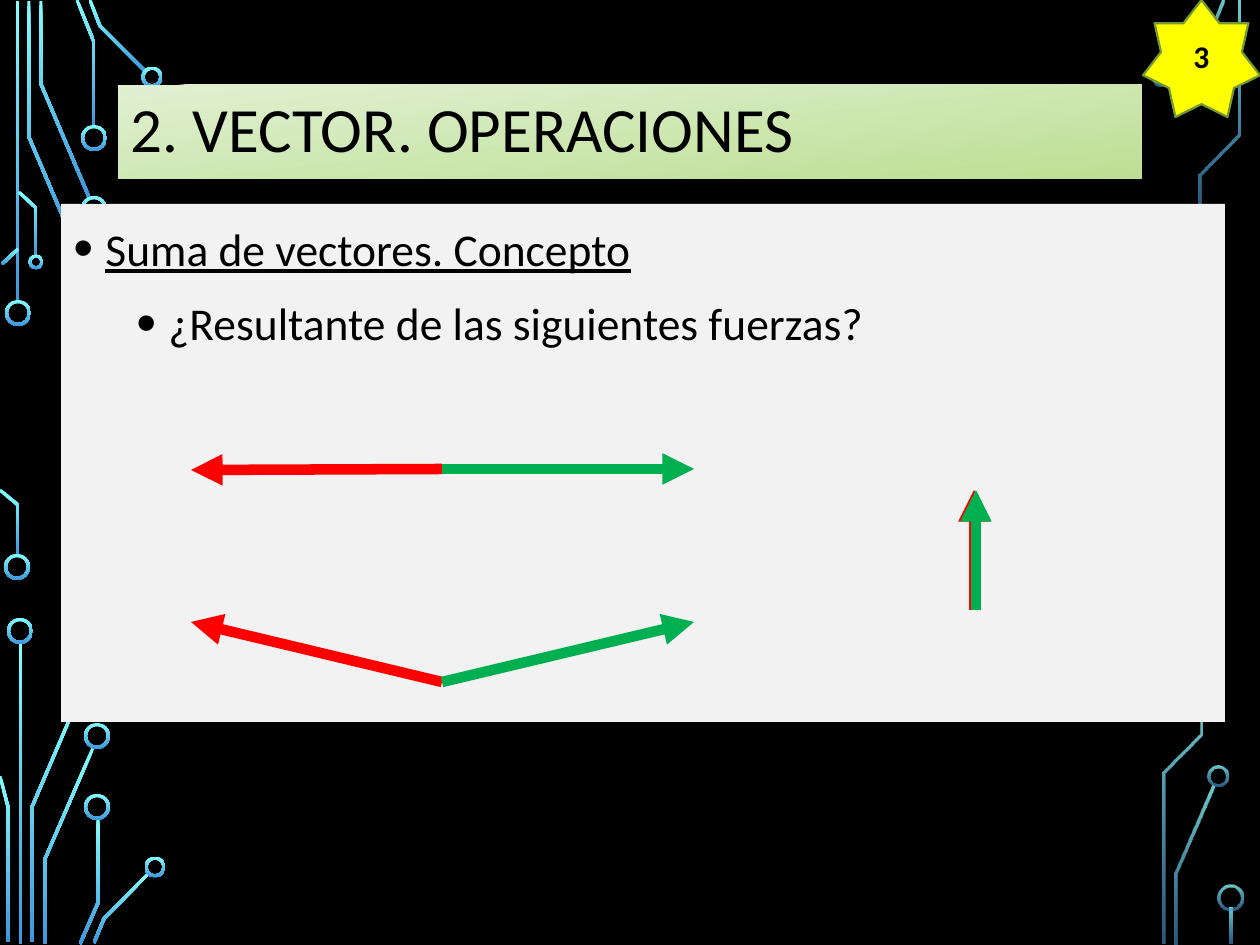
from math import hypot

from lxml.etree import SubElement
from pptx import Presentation
from pptx.dml.color import RGBColor
from pptx.enum.shapes import MSO_CONNECTOR, MSO_SHAPE
from pptx.enum.text import MSO_ANCHOR, PP_ALIGN
from pptx.oxml.ns import qn
from pptx.util import Pt

BLACK = RGBColor(0x00, 0x00, 0x00)
CYAN = RGBColor(0x82, 0xFF, 0xFF)
BLUE = RGBColor(0x3D, 0x97, 0xDE)
PALE_GREEN = RGBColor(0xE1, 0xF0, 0xD2)
LIGHT_GREEN = RGBColor(0xBC, 0xDF, 0x93)
GREY = RGBColor(0xF2, 0xF2, 0xF2)
RED = RGBColor(0xFF, 0x00, 0x00)
GREEN = RGBColor(0x00, 0xB0, 0x50)
YELLOW = RGBColor(0xFF, 0xFF, 0x00)
OLIVE = RGBColor(0x72, 0x98, 0x38)

WIDTH, HEIGHT = 1260, 945
TRACE_WIDTH = 3

# Circuit decoration: vertical bars (left, top, height), bent traces, rings (x, y, diameter)
LEFT_BARS = [(16, 1, 301), (19, 643, 301)]
LEFT_TRACES = [
    [(77, 250), (29, 137), (29, 1)],
    [(89, 197), (41, 84), (41, 1)],
    [(94, 126), (94, 42), (77, 0)],
    [(146, 72), (100, 26), (90, 0)],
    [(2, 264), (18, 249)],
    [(18, 556), (18, 505), (0, 490)],
    [(36, 256), (36, 208), (19, 192)],
    [(32, 942), (32, 807), (80, 695)],
    [(8, 942), (8, 807), (0, 776)],
    [(45, 944), (45, 859), (93, 748)],
    [(80, 944), (98, 903), (98, 819)],
    [(94, 943), (104, 919), (149, 873)],
]
LEFT_RINGS = [(18, 313, 26), (17, 567, 26), (94, 209, 26), (94, 138, 26), (152, 77, 21),
              (36, 262, 15), (20, 631, 26), (97, 736, 26), (97, 807, 26), (155, 867, 21)]
RIGHT_BARS = [(1230, 908, 36)]
RIGHT_TRACES = [
    [(1169, 70), (1213, 25), (1223, 0)],
    [(1176, 944), (1176, 873), (1213, 786)],
    [(1200, 213), (1200, 175), (1239, 135), (1239, 1)],
    [(1164, 944), (1164, 773), (1201, 735), (1201, 696)],
]
RIGHT_RINGS = [(1162, 76, 21), (1218, 776, 21), (1231, 898, 26)]


def emu(px):
    return round(px * 914400 / 126)


def ribbon(points, width):
    """Outline of a bent line of even width, with mitred corners."""
    normals = []
    for (x1, y1), (x2, y2) in zip(points, points[1:]):
        length = hypot(x2 - x1, y2 - y1)
        normals.append(((y1 - y2) / length, (x2 - x1) / length))
    left, right = [], []
    for (x, y), (ax, ay), (bx, by) in zip(points, normals[:1] + normals, normals + normals[-1:]):
        reach = width / 2 / (1 + ax * bx + ay * by)
        dx, dy = (ax + bx) * reach, (ay + by) * reach
        left.append((x + dx, y + dy))
        right.append((x - dx, y - dy))
    return left + right[::-1]


class SlideBuilder:
    font = "Calibri"

    def __init__(self, slide):
        self.slide = slide
        self.shapes = slide.shapes

    def background(self, color):
        fill = self.slide.background.fill
        fill.solid()
        fill.fore_color.rgb = color

    def gradient(self, shape, colors, angle, opacities=()):
        shape.shadow.inherit = False
        shape.line.fill.background()
        shape.fill.gradient()
        shape.fill.gradient_angle = 360 - angle
        for stop, color, position in zip(shape.fill.gradient_stops, colors, (0, 1)):
            stop.color.rgb = color
            stop.position = position
        tags = shape.fill._xPr.iter(qn("a:srgbClr"))
        for tag, opacity in zip(tags, opacities):
            SubElement(tag, qn("a:alpha"), val=str(opacity * 1000))

    def shape(self, kind, left, top, width, height, color=None):
        shape = self.shapes.add_shape(kind, emu(left), emu(top), emu(width), emu(height))
        shape.shadow.inherit = False
        shape.line.fill.background()
        if color is not None:
            shape.fill.solid()
            shape.fill.fore_color.rgb = color
        return shape

    def trace(self, points):
        start, *rest = [(emu(x), emu(y)) for x, y in ribbon(points, TRACE_WIDTH)]
        builder = self.shapes.build_freeform(*start)
        builder.add_line_segments(rest, close=True)
        return builder.convert_to_shape()

    def ring(self, x, y, size):
        ring = self.shape(MSO_SHAPE.DONUT, x - size / 2, y - size / 2, size, size)
        ring.adjustments[0] = TRACE_WIDTH / size
        return ring

    def circuit(self, bars, traces, rings, opacities=()):
        parts = [self.shape(MSO_SHAPE.RECTANGLE, left, top, TRACE_WIDTH, height)
                 for left, top, height in bars]
        parts += [self.trace(points) for points in traces]
        parts += [self.ring(*ring) for ring in rings]
        for part in parts:
            self.gradient(part, (CYAN, BLUE), 90, opacities)

    def text(self, shape, lines, size, anchor, align=PP_ALIGN.LEFT, spacing=1.0, bold=False):
        frame = shape.text_frame
        frame.word_wrap = True
        frame.vertical_anchor = anchor
        frame.text = "\n".join(lines)
        for para in frame.paragraphs:
            para.alignment = align
            para.line_spacing = spacing
            for span in para.runs:
                span.font.name = self.font
                span.font.size = Pt(size)
                span.font.bold = bold
                span.font.color.rgb = BLACK
        return frame.paragraphs

    def bullet(self, para, margin, indent):
        props = para._p.get_or_add_pPr()
        props.set("marL", str(emu(margin)))
        props.set("indent", str(emu(indent)))
        SubElement(props, qn("a:buSzPct"), val="125000")
        SubElement(props, qn("a:buFont"), typeface="Arial")
        SubElement(props, qn("a:buChar"), char="•")

    def arrow(self, start, end, color):
        line = self.shapes.add_connector(MSO_CONNECTOR.STRAIGHT, *map(emu, start + end))
        line.line.color.rgb = color
        line.line.width = Pt(6)
        SubElement(line.line._get_or_add_ln(), qn("a:tailEnd"), type="triangle")
        SubElement(line._element.spPr, qn("a:effectLst"))


def main():
    deck = Presentation()
    deck.slide_width, deck.slide_height = emu(WIDTH), emu(HEIGHT)
    page = SlideBuilder(deck.slides.add_slide(deck.slide_layouts[6]))

    # Background with circuit lines on both sides
    page.background(BLACK)
    page.circuit(LEFT_BARS, LEFT_TRACES, LEFT_RINGS)
    page.circuit(RIGHT_BARS, RIGHT_TRACES, RIGHT_RINGS, opacities=(80, 60))

    # Title
    title = page.shape(MSO_SHAPE.RECTANGLE, 118, 85, 1024, 94)
    page.gradient(title, (PALE_GREEN, LIGHT_GREEN), 84)
    page.text(title, ["2. VECTOR. OPERACIONES"], 36, MSO_ANCHOR.MIDDLE, spacing=0.9)

    # Body panel
    panel = page.shape(MSO_SHAPE.RECTANGLE, 61, 204, 1164, 518, GREY)
    heading, question = page.text(
        panel, ["Suma de vectores. Concepto", "¿Resultante de las siguientes fuerzas?"],
        26, MSO_ANCHOR.TOP, spacing=1.2)
    page.bullet(heading, 32, -32)
    page.bullet(question, 95, -32)
    heading.runs[0].font.underline = True
    question.space_before = Pt(5)

    # Force pairs: opposite, oblique and parallel
    for start, red_end, green_end in [((442, 469), (191, 470), (694, 469)),
                                      ((442, 682), (191, 622), (694, 622))]:
        page.arrow(start, red_end, RED)
        page.arrow(start, green_end, GREEN)
    for x, color in [(974, RED), (976, GREEN)]:
        page.arrow((x, 610), (x, 490), color)

    # Page number star
    star = page.shape(MSO_SHAPE.STAR_7_POINT, 1143, 0, 117, 117, YELLOW)
    star.line.color.rgb = OLIVE
    star.line.width = Pt(1.25)
    page.text(star, ["3"], 18, MSO_ANCHOR.MIDDLE, PP_ALIGN.CENTER, bold=True)

    deck.save("out.pptx")


if __name__ == "__main__":
    main()
